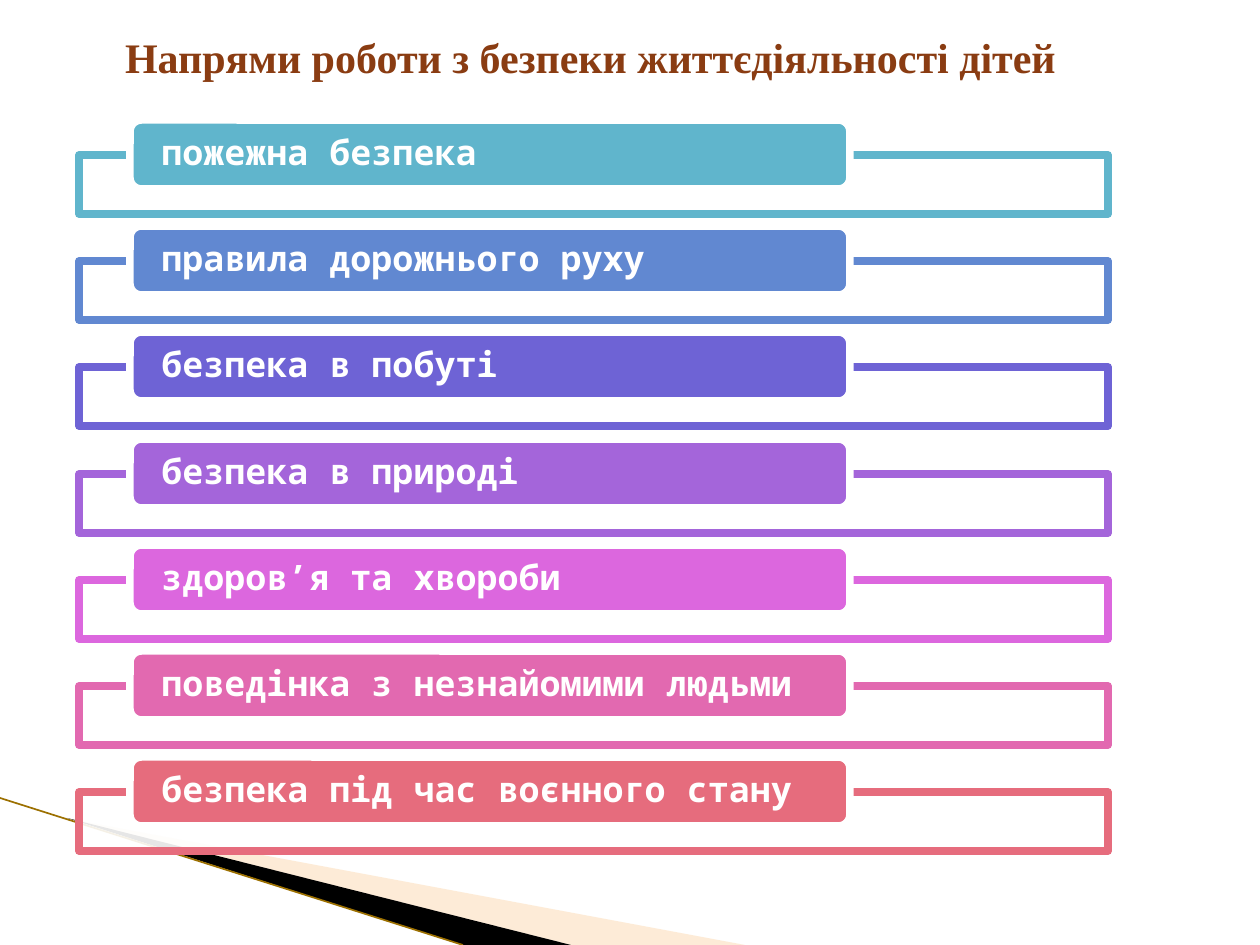
from lxml import etree
from pptx import Presentation
from pptx.dml.color import RGBColor
from pptx.enum.shapes import MSO_CONNECTOR, MSO_SHAPE
from pptx.enum.text import MSO_ANCHOR, PP_ALIGN
from pptx.oxml.ns import qn
from pptx.util import Pt

SCALE = 914400 / 126
RECTANGLE, ROUNDED = MSO_SHAPE.RECTANGLE, MSO_SHAPE.ROUNDED_RECTANGLE
STRAIGHT = MSO_CONNECTOR.STRAIGHT
MIDDLE = MSO_ANCHOR.MIDDLE
LEFT, CENTER = PP_ALIGN.LEFT, PP_ALIGN.CENTER

WHITE = "FFFFFF"
TITLE = "Напрями роботи з безпеки життєдіяльності дітей"
TOPICS = [
    ("пожежна безпека", "60B5CC"),
    ("правила дорожнього руху", "6188D1"),
    ("безпека в побуті", "6E63D5"),
    ("безпека в природі", "A465DA"),
    ("здоров’я та хвороби", "DC67DE"),
    ("поведінка з незнайомими людьми", "E269B0"),
    ("безпека під час воєнного стану", "E66C7D"),
]
FIRST_TOP, LAST_TOP = 155, 792


def px(value):
    return round(value * SCALE)


def color(value):
    return RGBColor.from_string(value)


class SlideBuilder:
    title_font = "Times New Roman"
    topic_font = "Noto Sans Mono"
    border = Pt(4.33)

    def __init__(self, slide):
        self.slide = slide

    def paint(self, shape, fill, line=None, opacity=100):
        shape.shadow.inherit = False
        shape.fill.solid()
        shape.fill.fore_color.rgb = color(fill)
        if opacity < 100:
            fill_color = shape._element.spPr.find(qn("a:solidFill"))[0]
            etree.SubElement(fill_color, qn("a:alpha"), val=str(opacity * 1000))
        if line:
            shape.line.color.rgb = color(line)
            shape.line.width = self.border
        else:
            shape.line.fill.background()

    def set_text(self, shape, text, font, size, ink, align, inset):
        frame = shape.text_frame
        frame.text = text
        frame.word_wrap = True
        frame.vertical_anchor = MIDDLE
        frame.margin_left = frame.margin_right = px(inset)
        frame.margin_top = frame.margin_bottom = 0
        para = frame.paragraphs[0]
        para.alignment = align
        span = para.runs[0]
        span.font.name = font
        span.font.size = Pt(size)
        span.font.bold = True
        span.font.color.rgb = color(ink)
        return para

    def box(self, kind, left, top, width, height, fill, line, opacity=100):
        shape = self.slide.shapes.add_shape(
            kind, px(left), px(top), px(width), px(height))
        self.paint(shape, fill, line, opacity)
        return shape

    def wedge(self, points, fill, opacity=100):
        outline = self.slide.shapes.build_freeform(*points[0], scale=SCALE)
        outline.add_line_segments(points[1:], close=True)
        self.paint(outline.convert_to_shape(), fill, opacity=opacity)

    def line(self, start, end, ink, width):
        connector = self.slide.shapes.add_connector(
            STRAIGHT, *map(px, start + end))
        connector.line.color.rgb = color(ink)
        connector.line.width = Pt(width)
        etree.SubElement(connector._element.spPr, qn("a:effectLst"))

    def title(self, text):
        box = self.slide.shapes.add_textbox(px(59), px(16), px(1063), px(82))
        self.set_text(box, text, self.title_font, 24, "8A3C12", CENTER, 12)

    def topic(self, text, accent, top):
        self.box(RECTANGLE, 79, top, 1029, 59, WHITE, accent, opacity=90)
        label = self.box(ROUNDED, 130, top - 35, 720, 69, accent, WHITE)
        para = self.set_text(label, text, self.topic_font, 20, WHITE, LEFT, 28)
        para.line_spacing = 0.9


def main():
    deck = Presentation()
    deck.slide_width, deck.slide_height = px(1260), px(945)
    page = SlideBuilder(deck.slides.add_slide(deck.slide_layouts[6]))

    # Corner decoration
    page.wedge([(69, 819), (745, 945), (571, 945)], "FCCF9B", opacity=40)
    page.wedge([(67, 818), (571, 945), (462, 945)], "000000")
    page.line((0, 798), (463, 945), "9C7000", 0.95)

    # Evenly spaced topics
    pitch = (LAST_TOP - FIRST_TOP) / (len(TOPICS) - 1)
    for index, (text, accent) in enumerate(TOPICS):
        page.topic(text, accent, round(FIRST_TOP + index * pitch))

    # Heading
    page.title(TITLE)
    deck.save("out.pptx")


if __name__ == "__main__":
    main()
